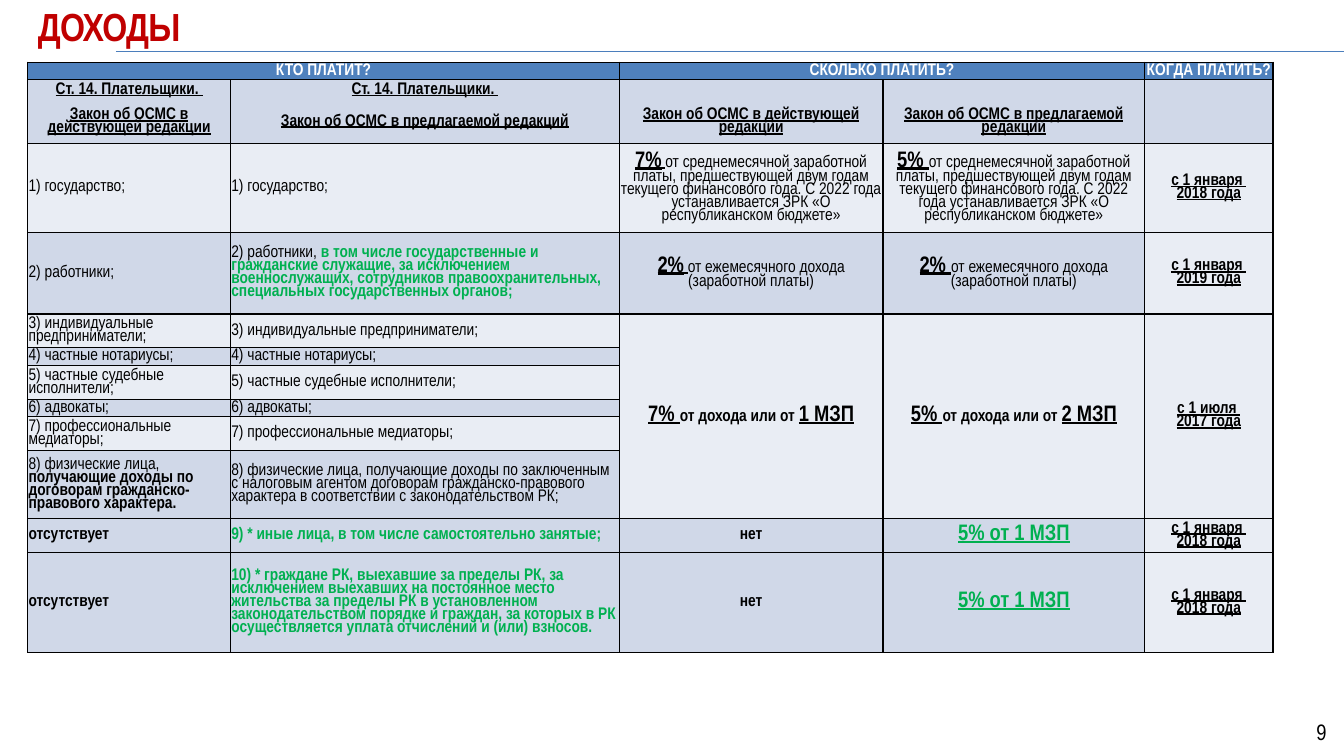
from dataclasses import dataclass

import lxml.etree
import pptx
import pptx.dml.color
import pptx.enum.shapes
import pptx.enum.text
import pptx.oxml.ns
import pptx.util

Cm, Pt = pptx.util.Cm, pptx.util.Pt
RGBColor = pptx.dml.color.RGBColor
PP_ALIGN, MSO_ANCHOR = pptx.enum.text.PP_ALIGN, pptx.enum.text.MSO_ANCHOR
qn = pptx.oxml.ns.qn

FONT = "Arial Narrow"
BLACK = RGBColor(0x00, 0x00, 0x00)
WHITE = RGBColor(0xFF, 0xFF, 0xFF)
RED = RGBColor(0xC0, 0x00, 0x00)
GREEN = RGBColor(0x00, 0xB0, 0x50)
RULE_BLUE = RGBColor(0x4B, 0x7E, 0xBC)
HEADER_BLUE = RGBColor(0x4F, 0x81, 0xBD)
BAND = RGBColor(0xD0, 0xD8, 0xE8)
PALE = RGBColor(0xE9, 0xED, 0xF4)

COLUMN_WIDTHS = [5.11, 9.8, 6.64, 6.6, 3.23]
ROW_HEIGHTS = [0.4, 0.42, 1.07, 2.14, 2.06, 0.81, 0.4, 0.82, 0.4, 0.81, 1.71, 0.81, 2.52]
FIRST_DATA_ROW, LAST_STRIPED_ROW = 3, 10
WHEN_COLUMN = 4


@dataclass(frozen=True)
class Span:
    text: str
    bold: bool = False
    underline: bool = False
    size: float = 12
    color: RGBColor = BLACK


Paragraph = list[Span]
Content = list[Paragraph]


def plain(text: str) -> Content:
    return [[Span(text)]]


def bold(text: str, color: RGBColor = BLACK) -> Content:
    return [[Span(text, bold=True, color=color)]]


def underlined(*lines: str) -> Content:
    return [[Span(line, bold=True, underline=True)] for line in lines]


def rate(text: str, color: RGBColor = BLACK) -> Span:
    return Span(text, bold=True, underline=True, size=16, color=color)


def income_rate(percent: str, minimum: str) -> Content:
    return [[rate(percent), Span("от дохода или от ", bold=True), rate(minimum)]]


STATE_BASE = Span(
    "от среднемесячной заработной платы, предшествующей двум годам текущего "
    "финансового года. С 2022 года устанавливается ЗРК «О республиканском бюджете»")
WORKER_BASE = Span("от ежемесячного дохода (заработной платы)")
SMALL_GAP = Span(" ", bold=True, underline=True)
PAYERS = underlined("Ст. 14. Плательщики. ")
CURRENT_LAW = underlined("Закон об ОСМС в действующей редакции")
PROPOSED_LAW = underlined("Закон об ОСМС в предлагаемой редакций")
FROM_2018 = underlined("с 1 января ", "2018 года")
SELF_PAID_RATE = [[rate("5% от 1 МЗП", GREEN)]]
SAME_PAYERS = [
    "4) частные нотариусы;",
    "5) частные судебные исполнители;",
    "6) адвокаты;",
    "7) профессиональные медиаторы;",
]

ROWS: list[list[Content]] = [
    [bold("КТО ПЛАТИТ?", WHITE), [], bold("СКОЛЬКО ПЛАТИТЬ?", WHITE), [],
     bold("КОГДА ПЛАТИТЬ?", WHITE)],
    [PAYERS, PAYERS, [], [], []],
    [CURRENT_LAW, PROPOSED_LAW, CURRENT_LAW, PROPOSED_LAW, []],
    [plain("1) государство;"), plain("1) государство;"),
     [[rate("7%"), SMALL_GAP, STATE_BASE]], [[rate("5% "), STATE_BASE]], FROM_2018],
    [plain("2) работники;"),
     [[Span("2) работники, "),
       Span("в том числе государственные и гражданские служащие, за исключением "
            "военнослужащих, сотрудников правоохранительных, специальных "
            "государственных органов;", bold=True, color=GREEN)]],
     [[rate("2%"), SMALL_GAP, WORKER_BASE]], [[rate("2% "), WORKER_BASE]],
     underlined("с 1 января ", "2019 года")],
    [plain("3) индивидуальные предприниматели;"), plain("3) индивидуальные предприниматели;"),
     income_rate("7% ", "1 МЗП"), income_rate("5% ", "2 МЗП"),
     underlined("с 1 июля ", "2017 года")],
    *[[plain(payer), plain(payer), [], [], []] for payer in SAME_PAYERS],
    [[[Span("8) физические лица, "),
       Span("получающие доходы по договорам гражданско-правового характера.", bold=True)]],
     plain("8) физические лица, получающие доходы по заключенным с налоговым агентом "
           "договорам гражданско-правового характера в соответствии с "
           "законодательством РК;"), [], [], []],
    [bold("отсутствует"),
     bold("9) * иные лица, в том числе самостоятельно занятые;", GREEN),
     bold("нет"), SELF_PAID_RATE, FROM_2018],
    [bold("отсутствует"),
     bold("10) * граждане РК, выехавшие за пределы РК, за исключением выехавших на "
          "постоянное место жительства за пределы РК в установленном законодательством "
          "порядке и граждан, за которых в РК осуществляется уплата отчислений и (или) "
          "взносов.", GREEN),
     bold("нет"), SELF_PAID_RATE, FROM_2018],
]


def format_font(font, span: Span) -> None:
    font.name, font.size = FONT, Pt(span.size)
    font.bold, font.underline = span.bold, span.underline
    font.color.rgb = span.color


def cell_fill(row: int, column: int) -> RGBColor:
    if row == 0:
        return HEADER_BLUE
    if row < FIRST_DATA_ROW:
        return BAND
    striped_pale = row <= LAST_STRIPED_ROW and row % 2 == 1
    return PALE if striped_pale or column == WHEN_COLUMN else BAND


def set_borders(cell, row: int) -> None:
    """Black borders, open between the two subheader rows."""
    open_side = {1: "lnB", 2: "lnT"}.get(row)
    properties = cell._tc.get_or_add_tcPr()
    for side in ("lnL", "lnR", "lnT", "lnB"):
        border = lxml.etree.SubElement(properties, qn(f"a:{side}"), w=str(Pt(1)))
        if side == open_side:
            lxml.etree.SubElement(border, qn("a:noFill"))
        else:
            ink = lxml.etree.SubElement(border, qn("a:solidFill"))
            lxml.etree.SubElement(ink, qn("a:srgbClr"), val=str(BLACK))


def fill_cell(cell, content: Content, row: int, column: int) -> None:
    set_borders(cell, row)
    cell.fill.solid()
    cell.fill.fore_color.rgb = cell_fill(row, column)
    cell.vertical_anchor = MSO_ANCHOR.MIDDLE
    cell.margin_left = cell.margin_right = cell.margin_top = Cm(0.02)
    cell.margin_bottom = 0
    centred = row < FIRST_DATA_ROW or column >= 2
    frame = cell.text_frame
    for index, spans in enumerate(content or [[]]):
        paragraph = frame.add_paragraph() if index else frame.paragraphs[0]
        paragraph.alignment = PP_ALIGN.CENTER if centred else PP_ALIGN.LEFT
        paragraph.line_spacing = 0.82
        for span in spans:
            run = paragraph.add_run()
            run.text = span.text
            format_font(run.font, span)
        if not spans:
            lxml.etree.SubElement(paragraph._p, qn("a:endParaRPr"), sz="1200")


def add_payment_table(slide) -> None:
    table = slide.shapes.add_table(
        len(ROWS), len(COLUMN_WIDTHS), Cm(0.7), Cm(1.57),
        Cm(sum(COLUMN_WIDTHS)), Cm(sum(ROW_HEIGHTS))).table
    table.first_row = table.horz_banding = False
    for column, width in zip(table.columns, COLUMN_WIDTHS):
        column.width = Cm(width)
    for row, height in zip(table.rows, ROW_HEIGHTS):
        row.height = Cm(height)
    for row, contents in enumerate(ROWS):
        for column, content in enumerate(contents):
            fill_cell(table.cell(row, column), content, row, column)
    for column in (0, 2):
        table.cell(0, column).merge(table.cell(0, column + 1))
    for column in (2, 3, WHEN_COLUMN):
        table.cell(5, column).merge(table.cell(LAST_STRIPED_ROW, column))


def add_title_rule(slide) -> None:
    rule = slide.shapes.add_connector(
        pptx.enum.shapes.MSO_CONNECTOR.STRAIGHT, Cm(2.92), Cm(1.3), Cm(33.87), Cm(1.3))
    rule.line.color.rgb, rule.line.width = RULE_BLUE, Pt(0.75)
    lxml.etree.SubElement(rule._element.spPr, qn("a:effectLst"))


def set_label(shape, span: Span, alignment) -> None:
    frame = shape.text_frame
    frame.text = span.text
    frame.word_wrap = True
    frame.vertical_anchor = MSO_ANCHOR.MIDDLE
    frame.paragraphs[0].alignment = alignment
    format_font(frame.paragraphs[0].runs[0].font, span)


def main() -> None:
    deck = pptx.Presentation()
    deck.slide_width, deck.slide_height = Cm(33.87), Cm(19.05)
    slide = deck.slides.add_slide(deck.slide_layouts[5])
    add_title_rule(slide)
    heading = slide.shapes.title
    heading.left, heading.top, heading.width, heading.height = Cm(0.7), 0, Cm(31.1), Cm(1.3)
    set_label(heading, Span("ДОХОДЫ", bold=True, size=28, color=RED), PP_ALIGN.LEFT)
    heading.text_frame.auto_size = pptx.enum.text.MSO_AUTO_SIZE.NONE
    heading.text_frame.paragraphs[0].runs[0].font._element.set("spc", "-50")
    page_number = slide.shapes.add_textbox(Cm(31.57), Cm(17.93), Cm(2.11), Cm(1.02))
    set_label(page_number, Span("9", size=16), PP_ALIGN.RIGHT)
    add_payment_table(slide)
    deck.save("out.pptx")


if __name__ == "__main__":
    main()
